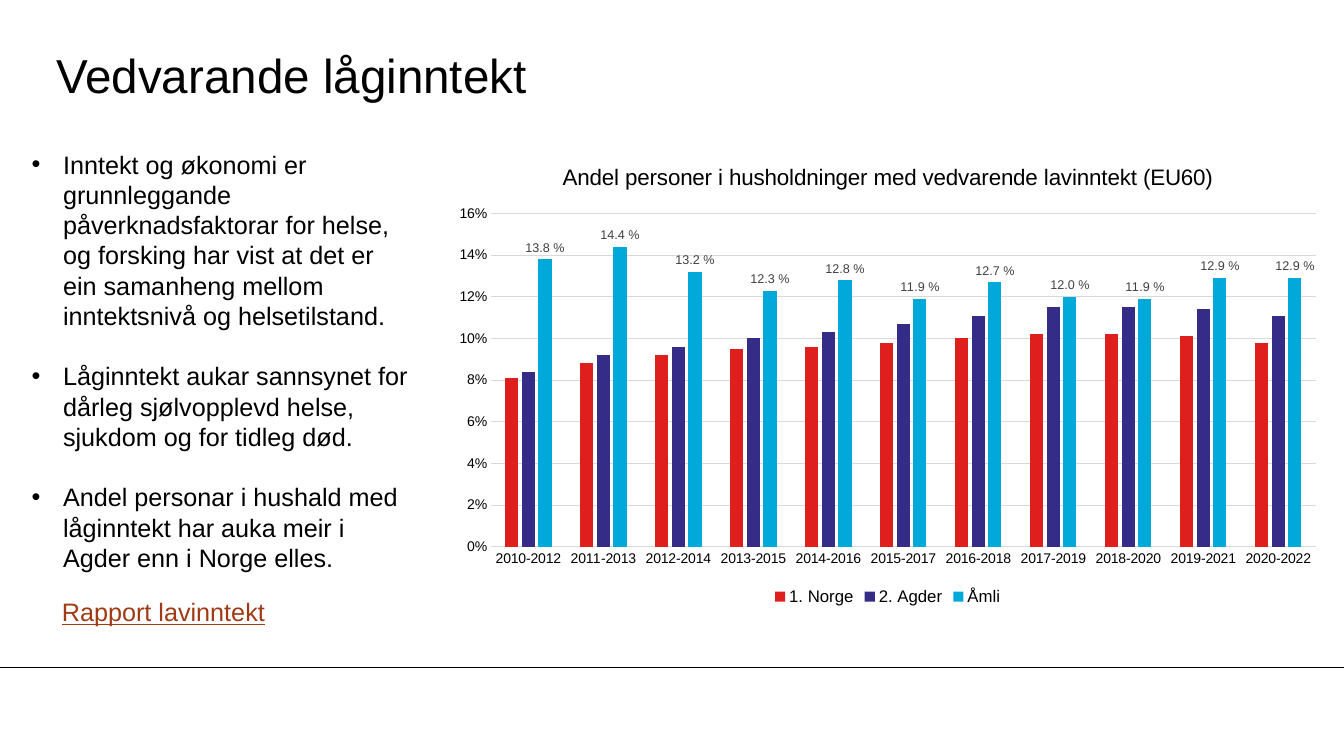
from lxml import etree
from pptx import Presentation, util as u
from pptx.chart.data import CategoryChartData
from pptx.dml.color import RGBColor
from pptx.enum import chart as kinds, shapes, text
from pptx.oxml import parse_xml
from pptx.oxml.ns import nsdecls, qn

BLACK = RGBColor(0x00, 0x00, 0x00)
GREY = RGBColor(0x40, 0x40, 0x40)
PALE = RGBColor(0xD9, 0xD9, 0xD9)
RUST = RGBColor(0x9F, 0x3A, 0x14)
RED = RGBColor(0xDF, 0x1F, 0x1D)
NAVY = RGBColor(0x34, 0x2C, 0x86)
CYAN = RGBColor(0x00, 0xA9, 0xDA)

WIDE, HIGH = 33.87, 19.05

POINTS = [
    "Inntekt og økonomi er grunnleggande påverknadsfaktorar for helse, "
    "og forsking har vist at det er ein samanheng mellom inntektsnivå "
    "og helsetilstand.",
    "Låginntekt aukar sannsynet for dårleg sjølvopplevd helse, "
    "sjukdom og for tidleg død.",
    "Andel personar i hushald med låginntekt har auka meir i Agder "
    "enn i Norge elles.",
]
SPANS = [f"{year}-{year + 2}" for year in range(2010, 2021)]
SERIES = [
    ("1. Norge", RED, [0.081, 0.088, 0.092, 0.095, 0.096, 0.098,
                       0.1, 0.102, 0.102, 0.101, 0.098]),
    ("2. Agder", NAVY, [0.084, 0.092, 0.096, 0.1, 0.103, 0.107,
                        0.111, 0.115, 0.115, 0.114, 0.111]),
    ("Åmli", CYAN, [0.138, 0.144, 0.132, 0.123, 0.128, 0.119,
                    0.127, 0.12, 0.119, 0.129, 0.129]),
]


def place(parent, area, spot):
    """Put a chart part at a spot of the slide (cm), inside the chart's area."""
    left, top, wide, high = area
    layout = parent.find(qn("c:layout"))
    if layout is None:
        layout = parse_xml(f"<c:layout {nsdecls('c')}/>")
        parent.insert(0, layout)
    manual = etree.SubElement(layout, qn("c:manualLayout"))
    if len(spot) == 4:
        etree.SubElement(manual, qn("c:layoutTarget")).set("val", "inner")
    for side in "xy":
        etree.SubElement(manual, qn(f"c:{side}Mode")).set("val", "edge")
    for key, value, start, size in zip(
            "xywh", spot, (left, top, 0, 0), (wide, high, wide, high)):
        share = (value - start) / size
        etree.SubElement(manual, qn(f"c:{key}")).set("val", f"{share:.4f}")


class Page:
    def __init__(self, slide, face="Arial"):
        self.slide, self.face = slide, face

    def style(self, font, size, color=BLACK):
        font.name, font.size = self.face, u.Pt(size)
        font.bold = False
        font.color.rgb = color

    def rule(self, top):
        line = self.slide.shapes.add_connector(
            shapes.MSO_CONNECTOR.STRAIGHT, 0, u.Cm(top), u.Cm(WIDE), u.Cm(top))
        line.line.color.rgb, line.line.width = BLACK, u.Pt(0.75)
        etree.SubElement(line.element.spPr, qn("a:effectLst"))

    def box(self, area, lines, size, color=BLACK):
        shape = self.slide.shapes.add_textbox(*map(u.Cm, area))
        frame = shape.text_frame
        frame.word_wrap = True
        frame.text = "\n".join(lines)
        for par in frame.paragraphs:
            for run in par.runs:
                self.style(run.font, size, color)
        return frame

    def title(self, area, words):
        frame = self.box(area, [words], 34)
        frame.margin_left = frame.margin_right = 0
        frame.margin_top = frame.margin_bottom = 0
        frame.vertical_anchor = text.MSO_ANCHOR.MIDDLE

    def list(self, area, lines, size):
        frame = self.box(area, lines, size)
        indent = u.Cm(0.79)
        for i, par in enumerate(frame.paragraphs):
            if i:
                par.space_before = u.Pt(21.6)
            props = par._p.get_or_add_pPr()
            props.set("marL", str(indent))
            props.set("indent", str(-indent))
            etree.SubElement(props, qn("a:buFont")).set("typeface", self.face)
            etree.SubElement(props, qn("a:buChar")).set("char", "•")

    def link(self, area, words, size):
        frame = self.box(area, [words], size, RUST)
        frame.paragraphs[0].runs[0].font.underline = True

    def chart(self, area, head, spans, series):
        data = CategoryChartData(number_format="0.0%")
        data.categories = spans
        for name, _, values in series:
            data.add_series(name, values)
        chart = self.slide.shapes.add_chart(
            kinds.XL_CHART_TYPE.COLUMN_CLUSTERED, *map(u.Cm, area), data).chart
        self.style(chart.font, 10)
        chart.has_title = True
        frame = chart.chart_title.text_frame
        frame.text = head
        self.style(frame.paragraphs[0].runs[0].font, 16)
        place(chart.chart_title._element, area, (14.08, 4))
        place(chart._chartSpace.chart.plotArea, area, (12.37, 5.38, 20.79, 8.4))

        chart.has_legend = True
        chart.legend.position = kinds.XL_LEGEND_POSITION.BOTTOM
        chart.legend.include_in_layout = False
        self.style(chart.legend.font, 12)
        self.axes(chart)

        plot = chart.plots[0]
        plot.gap_width, plot.overlap = 219, -27
        plot.vary_by_categories = False
        for bars, (_, color, _) in zip(plot.series, series):
            bars.format.fill.solid()
            bars.format.fill.fore_color.rgb = color
            bars.invert_if_negative = False
        labels = plot.series[-1].data_labels
        labels.show_value = True
        labels.number_format = r"0.0\ %"
        labels.number_format_is_linked = False
        labels.position = kinds.XL_LABEL_POSITION.OUTSIDE_END
        self.style(labels.font, 9, GREY)

    def axes(self, chart):
        cat, val = chart.category_axis, chart.value_axis
        for axis in (cat, val):
            axis.major_tick_mark = kinds.XL_TICK_MARK.NONE
            axis.minor_tick_mark = kinds.XL_TICK_MARK.NONE
            self.style(axis.tick_labels.font, 10)
        val.minimum_scale, val.maximum_scale, val.major_unit = 0, 0.16, 0.02
        val.tick_labels.number_format = "0%"
        val.tick_labels.number_format_is_linked = False
        val.format.line.fill.background()
        val.has_major_gridlines = True
        for line in (cat.format.line, val.major_gridlines.format.line):
            line.color.rgb, line.width = PALE, u.Pt(0.75)


def main():
    deck = Presentation()
    deck.slide_width, deck.slide_height = u.Cm(WIDE), u.Cm(HIGH)
    page = Page(deck.slides.add_slide(deck.slide_layouts[6]))
    page.rule(16.81)
    page.title((1.42, 0.91, 28.19, 1.91), "Vedvarande låginntekt")
    page.list((0.55, 3.63, 10.13, 11.02), POINTS, 18)
    page.link((1.31, 14.91, 6.73, 1.02), "Rapport lavinntekt", 18)
    page.chart((11.13, 3.63, 22.48, 11.73),
               "Andel personer i husholdninger med vedvarende lavinntekt (EU60)",
               SPANS, SERIES)
    deck.save("out.pptx")


if __name__ == "__main__":
    main()
